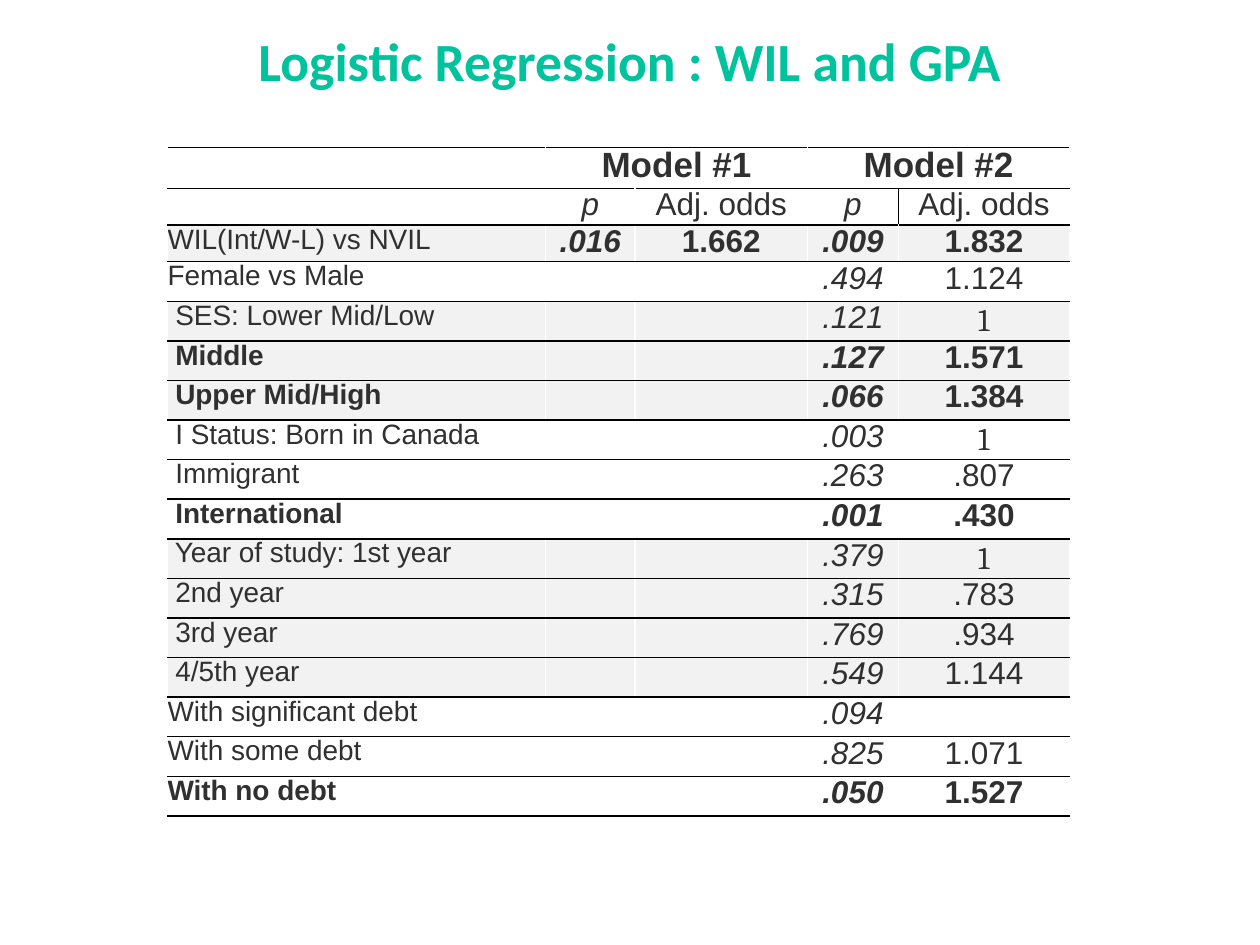
"""Build the slide with the logistic regression table."""
from dataclasses import dataclass

from lxml.etree import SubElement
from pptx import Presentation
from pptx.dml.color import RGBColor as Rgb
from pptx.enum.text import MSO_ANCHOR as Anchor, PP_ALIGN as Align
from pptx.oxml.ns import qn
from pptx.util import Inches, Pt


@dataclass(frozen=True)
class Theme:
    accent: str = "00C29D"
    ink: str = "303030"
    rule: str = "000000"
    paper: str = "FFFFFF"
    band: str = "F2F2F2"
    title_font: str = "Calibri"
    body_font: str = "Arial"
    reference_font: str = "Cambria"
    title_size: float = 30.7
    model_size: float = 20
    value_size: float = 18
    label_size: float = 16
    line_spacing: float = 0.97


@dataclass(frozen=True)
class Predictor:
    label: str
    p_value: str
    odds: str = ""
    shaded: bool = False
    bold: bool = False
    first_p: str = ""
    first_odds: str = ""


@dataclass(frozen=True)
class Style:
    size: float
    font: str = "Arial"
    color: str = "303030"
    bold: bool = False
    italic: bool = False
    align: Align = Align.CENTER


THEME = Theme()
COLUMNS = (3, 0.71, 1.37, 0.72, 1.36)
HEADER_HEIGHTS = (0.31, 0.28)
FIRST_HEIGHT = 0.28
BODY_HEIGHT = 4.4
REFERENCE = "1"
PREDICTORS = (
    Predictor("WIL(Int/W-L) vs NVIL", ".009", "1.832", True, True, ".016", "1.662"),
    Predictor("Female vs Male", ".494", "1.124"),
    Predictor(" SES: Lower Mid/Low", ".121", REFERENCE, shaded=True),
    Predictor(" Middle", ".127", "1.571", shaded=True, bold=True),
    Predictor(" Upper Mid/High", ".066", "1.384", shaded=True, bold=True),
    Predictor(" I Status: Born in Canada", ".003", REFERENCE),
    Predictor(" Immigrant", ".263", ".807"),
    Predictor(" International", ".001", ".430", bold=True),
    Predictor(" Year of study: 1st year", ".379", REFERENCE, shaded=True),
    Predictor(" 2nd year", ".315", ".783", shaded=True),
    Predictor(" 3rd year", ".769", ".934", shaded=True),
    Predictor(" 4/5th year", ".549", "1.144", shaded=True),
    Predictor("With significant debt", ".094"),
    Predictor("With some debt", ".825", "1.071"),
    Predictor("With no debt", ".050", "1.527", bold=True),
)


def write(para, text: str, style: Style) -> None:
    para.alignment = style.align
    span = para.add_run()
    span.text = text
    font = span.font
    font.name, font.size = style.font, Pt(style.size)
    font.bold, font.italic = style.bold, style.italic
    font.color.rgb = Rgb.from_string(style.color)


def add_border(cell, side: str, color: str) -> None:
    line = SubElement(cell._tc.get_or_add_tcPr(), qn(f"a:ln{side}"), w=str(Pt(1)))
    SubElement(SubElement(line, qn("a:solidFill")), qn("a:srgbClr"), val=color)


def fill_cell(cell, text: str, style: Style, shaded: bool = False,
              left: str = THEME.paper, right: str = THEME.paper) -> None:
    cell.margin_left = cell.margin_right = cell.margin_top = cell.margin_bottom = 0
    cell.vertical_anchor = Anchor.MIDDLE if style.font == THEME.reference_font else Anchor.TOP
    for side, color in zip("LRTB", (left, right, THEME.rule, THEME.rule)):
        add_border(cell, side, color)
    cell.fill.solid()
    cell.fill.fore_color.rgb = Rgb.from_string(THEME.band if shaded else THEME.paper)
    para = cell.text_frame.paragraphs[0]
    para.line_spacing = THEME.line_spacing
    if text:
        write(para, text, style)
    else:
        SubElement(para._p, qn("a:endParaRPr"), sz=str(int(THEME.label_size * 100)))


def fill_headers(table) -> None:
    model = Style(THEME.model_size, bold=True)
    for column, text in enumerate(("", "Model #1", "", "Model #2", "")):
        fill_cell(table.cell(0, column), text, model)
    for column in (1, 3):
        table.cell(0, column).merge(table.cell(0, column + 1))
    for column, text in enumerate(("", "p", "Adj. odds", "p", "Adj. odds")):
        style = Style(THEME.value_size, italic=text == "p")
        fill_cell(table.cell(1, column), text, style,
                  left=THEME.rule if column == 4 else THEME.paper,
                  right=THEME.rule if column == 3 else THEME.paper)


def fill_predictor(table, row: int, item: Predictor) -> None:
    label_bold = item.bold and not item.first_p
    label = Style(THEME.label_size, bold=label_bold, align=Align.LEFT)
    p_style = Style(THEME.value_size, bold=item.bold, italic=True)
    odds_font = THEME.reference_font if item.odds == REFERENCE else THEME.body_font
    odds_style = Style(THEME.value_size, odds_font, bold=item.bold)
    plain = Style(THEME.value_size, bold=item.bold)
    entries = ((item.label, label), (item.first_p, p_style), (item.first_odds, plain),
               (item.p_value, p_style), (item.odds, odds_style))
    for column, (text, style) in enumerate(entries):
        fill_cell(table.cell(row, column), text, style, item.shaded)


def add_title(slide) -> None:
    box = slide.shapes.add_textbox(Inches(0.25), Inches(0.17), Inches(9.5), Inches(0.62))
    frame = box.text_frame
    frame.word_wrap = True
    frame.vertical_anchor = Anchor.MIDDLE
    frame.margin_left = frame.margin_right = Inches(0.05)
    frame.margin_top = frame.margin_bottom = Inches(0.05)
    write(frame.paragraphs[0], "Logistic Regression : WIL and GPA",
          Style(THEME.title_size, THEME.title_font, THEME.accent, bold=True))


def add_results(slide) -> None:
    later = len(PREDICTORS) - 1
    heights = (*HEADER_HEIGHTS, FIRST_HEIGHT, *(BODY_HEIGHT / later,) * later)
    table = slide.shapes.add_table(len(heights), len(COLUMNS), Inches(1.33), Inches(1.17),
                                   Inches(sum(COLUMNS)), Inches(sum(heights))).table
    table.first_row = table.horz_banding = False
    for column, width in zip(table.columns, COLUMNS):
        column.width = Inches(width)
    for row, height in zip(table.rows, heights):
        row.height = Inches(height)
    fill_headers(table)
    for row, item in enumerate(PREDICTORS, start=len(HEADER_HEIGHTS)):
        fill_predictor(table, row, item)


def main() -> None:
    deck = Presentation()
    deck.slide_width, deck.slide_height = Inches(10), Inches(7.5)
    page = deck.slides.add_slide(deck.slide_layouts[6])
    add_title(page)
    add_results(page)
    deck.save("out.pptx")


if __name__ == "__main__":
    main()
